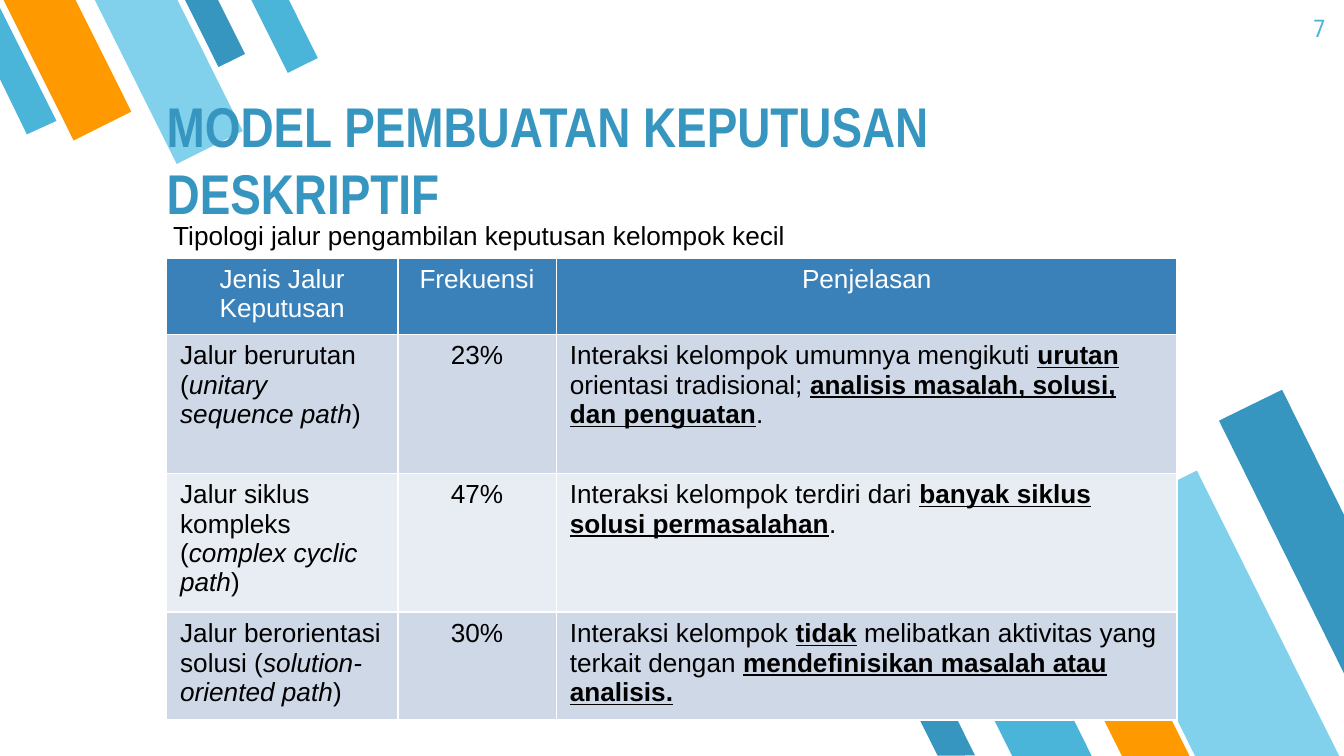
"""Build the slide on descriptive decision-making models."""
from copy import deepcopy
from dataclasses import dataclass
from typing import NamedTuple

from lxml.etree import SubElement
from pptx import Presentation
from pptx.dml.color import RGBColor as Color
from pptx.enum.shapes import MSO_SHAPE as Preset
from pptx.enum.text import MSO_ANCHOR as Anchor, MSO_AUTO_SIZE as AutoSize, PP_ALIGN as Align
from pptx.oxml.ns import qn
from pptx.slide import Slide
from pptx.text.text import TextFrame
from pptx.util import Inches, Pt


@dataclass(frozen=True)
class Theme:
    """Colours, fonts and type sizes of the slide."""
    teal: str = "4BB5D9"
    sky: str = "81D1EC"
    orange: str = "FF9900"
    blue: str = "3796BF"
    header: str = "3A81BA"
    odd_row: str = "CED8E7"
    even_row: str = "E8EDF3"
    white: str = "FFFFFF"
    black: str = "000000"
    title_font: str = "Arial Narrow"
    body_font: str = "Arial"
    number_font: str = "Roboto Condensed"
    title_size: int = 30
    body_size: int = 14
    number_size: int = 13


THEME = Theme()


class Box(NamedTuple):
    """A frame in inches."""
    left: float
    top: float
    width: float
    height: float


class Stripe(NamedTuple):
    """A slanted bar cut off at the slide edge."""
    box: Box
    rotation: float
    color: str


class Corner(NamedTuple):
    """A four-sided stripe clipped by the slide's side."""
    points: tuple[tuple[float, float], ...]
    color: str


class Span(NamedTuple):
    """A piece of text with its emphasis."""
    text: str
    strong: bool = False
    italic: bool = False


class Path(NamedTuple):
    """One decision path in the table."""
    name: str
    term: str
    frequency: str
    explanation: tuple[Span, ...]


LOWER, UPPER = 153.5, 333.5
STRIPES = (
    Stripe(Box(7.33, 4.5, 0.53, 1.32), LOWER, THEME.teal),
    Stripe(Box(8.53, 3.59, 0.96, 2.39), LOWER, THEME.sky),
    Stripe(Box(8.18, 4.68, 0.45, 1.11), LOWER, THEME.orange),
    Stripe(Box(6.88, 5.09, 0.25, 0.62), LOWER, THEME.blue),
    Stripe(Box(1.49, -0.08, 0.22, 0.56), UPPER, THEME.blue),
    Stripe(Box(0.26, -0.18, 0.48, 1.18), UPPER, THEME.orange),
    Stripe(Box(0.98, -0.2, 0.55, 1.37), UPPER, THEME.sky),
    Stripe(Box(1.99, -0.1, 0.25, 0.62), UPPER, THEME.teal),
)
CORNERS = (
    Corner(((9.54, 2.9), (9.07, 3.13), (10, 5.01), (10, 3.83)), THEME.blue),
    Corner(((0.2, 1), (0.42, 0.9), (0, 0.06), (0, 0.59)), THEME.teal),
)
HEADINGS = ("Jenis Jalur Keputusan", "Frekuensi", "Penjelasan")
PATHS = (
    Path("Jalur berurutan", "unitary sequence path", "23%", (
        Span("Interaksi kelompok umumnya mengikuti "),
        Span("urutan", strong=True),
        Span(" orientasi tradisional; "),
        Span("analisis masalah, solusi, dan penguatan", strong=True),
        Span(".\n"),
    )),
    Path("Jalur siklus kompleks", "complex cyclic path", "47%", (
        Span("Interaksi kelompok terdiri dari "),
        Span("banyak siklus solusi permasalahan", strong=True),
        Span("."),
    )),
    Path("Jalur berorientasi solusi", "solution-oriented path", "30%", (
        Span("Interaksi kelompok "),
        Span("tidak", strong=True),
        Span(" melibatkan aktivitas yang terkait dengan "),
        Span("mendefinisikan masalah atau analisis.", strong=True),
    )),
)
COLUMN_WIDTHS = (1.72, 1.18, 4.62)
ROW_HEIGHTS = (0.4, 0.78, 0.4, 0.55)


def write(frame: TextFrame, text: str, *, font: str = THEME.body_font,
          size: float = THEME.body_size, color: str = THEME.black, bold: bool = False,
          italic: bool = False, underline: bool = False, align: Align = Align.LEFT) -> None:
    """Append a formatted run, and a line break if the text ends with one."""
    paragraph = frame.paragraphs[0]
    paragraph.alignment = align
    run = paragraph.add_run()
    run.text = text.rstrip("\n")
    run.font.name, run.font.size = font, Pt(size)
    run.font.bold, run.font.italic, run.font.underline = bold, italic, underline
    run.font.color.rgb = Color.from_string(color)
    if text.endswith("\n"):
        paragraph.add_line_break()
        paragraph._p[-1].append(deepcopy(run._r.rPr))
        SubElement(paragraph._p, qn("a:endParaRPr"), sz=str(size * 100))


def paint(shape, color: str) -> None:
    """Give a shape a flat fill without line or shadow."""
    shape.shadow.inherit = False
    shape.fill.solid()
    shape.fill.fore_color.rgb = Color.from_string(color)
    shape.line.fill.background()


def draw_stripe(slide: Slide, stripe: Stripe) -> None:
    """Draw a mirrored, rotated stripe."""
    shape = slide.shapes.add_shape(Preset.FLOWCHART_MANUAL_INPUT, *map(Inches, stripe.box))
    shape.element.spPr.get_or_add_xfrm().set("flipH", "1")
    shape.rotation = stripe.rotation
    paint(shape, stripe.color)


def draw_corner(slide: Slide, corner: Corner) -> None:
    """Draw a clipped stripe from its vertices."""
    start, *others = [(Inches(x), Inches(y)) for x, y in corner.points]
    builder = slide.shapes.build_freeform(*start)
    builder.add_line_segments(others, close=True)
    paint(builder.convert_to_shape(), corner.color)


def set_insets(frame: TextFrame, inset: float) -> None:
    """Use the same inset on all four sides."""
    frame.margin_left = frame.margin_right = Inches(inset)
    frame.margin_top = frame.margin_bottom = Inches(inset)


def draw_title(slide: Slide, box: Box, text: str) -> None:
    """Place the title placeholder in front of the stripes."""
    title = slide.shapes.title
    title.left, title.top, title.width, title.height = map(Inches, box)
    slide.shapes.element.append(title.element)
    frame = title.text_frame
    frame.word_wrap, frame.auto_size = True, AutoSize.NONE
    frame.vertical_anchor = Anchor.BOTTOM
    set_insets(frame, 0.1)
    write(frame, text, font=THEME.title_font, size=THEME.title_size,
          color=THEME.blue, bold=True)


def add_frame(slide: Slide, box: Box) -> TextFrame:
    """Add a wrapping text box and return its frame."""
    frame = slide.shapes.add_textbox(*map(Inches, box)).text_frame
    frame.word_wrap = True
    return frame


def draw_table(slide: Slide, box: Box) -> None:
    """Draw the table of decision paths."""
    shape = slide.shapes.add_table(len(PATHS) + 1, len(HEADINGS), *map(Inches, box))
    table = shape.table
    for column, width in zip(table.columns, COLUMN_WIDTHS):
        column.width = Inches(width)
    for index, (row, height) in enumerate(zip(table.rows, ROW_HEIGHTS)):
        row.height = Inches(height)
        fill = (THEME.odd_row if index % 2 else THEME.even_row) if index else THEME.header
        for cell in row.cells:
            cell.fill.solid()
            cell.fill.fore_color.rgb = Color.from_string(fill)
    shape.width, shape.height = Inches(box.width), Inches(box.height)
    for column, heading in enumerate(HEADINGS):
        write(table.cell(0, column).text_frame, heading, color=THEME.white, align=Align.CENTER)
    for row, path in enumerate(PATHS, start=1):
        name, frequency, explanation = (table.cell(row, column).text_frame for column in range(3))
        for span in (Span(f"{path.name} ("), Span(path.term, italic=True), Span(")")):
            write(name, span.text, italic=span.italic)
        write(frequency, path.frequency, align=Align.CENTER)
        for span in path.explanation:
            write(explanation, span.text, bold=span.strong, underline=span.strong)


def main() -> None:
    """Assemble and save the presentation."""
    presentation = Presentation()
    presentation.slide_width, presentation.slide_height = Inches(10), Inches(10 * 9 / 16)
    slide = presentation.slides.add_slide(presentation.slide_layouts[5])
    for stripe in STRIPES:
        draw_stripe(slide, stripe)
    for corner in CORNERS:
        draw_corner(slide, corner)
    draw_title(slide, Box(1.14, 1.04, 7.99, 0.74), "MODEL PEMBUATAN KEPUTUSAN DESKRIPTIF")
    number = add_frame(slide, Box(9.36, 0, 0.6, 0.43))
    set_insets(number, 0.1)
    write(number, "7", font=THEME.number_font, size=THEME.number_size,
          color=THEME.teal, align=Align.RIGHT)
    draw_table(slide, Box(1.24, 1.92, 7.53, 3.43))
    write(add_frame(slide, Box(1.19, 1.58, 5.55, 0.34)),
          "Tipologi jalur pengambilan keputusan kelompok kecil")
    presentation.save("out.pptx")


if __name__ == "__main__":
    main()
